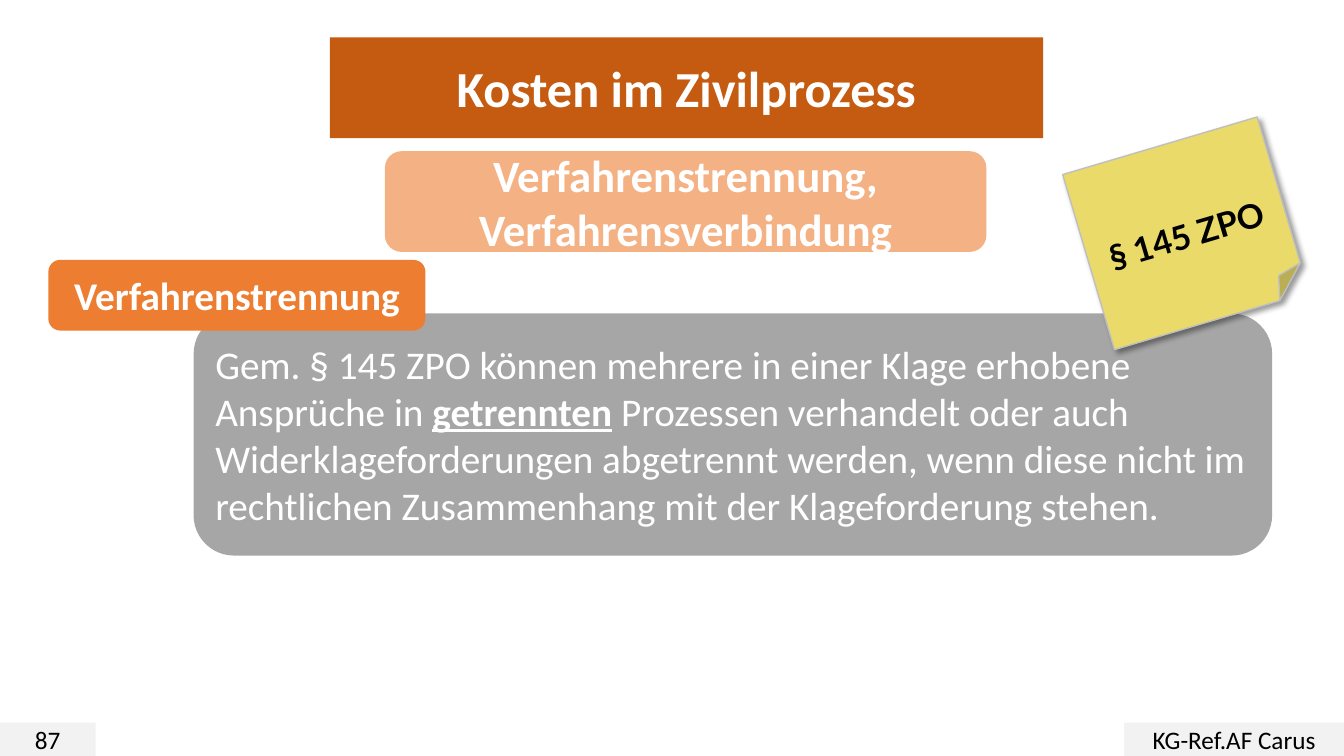
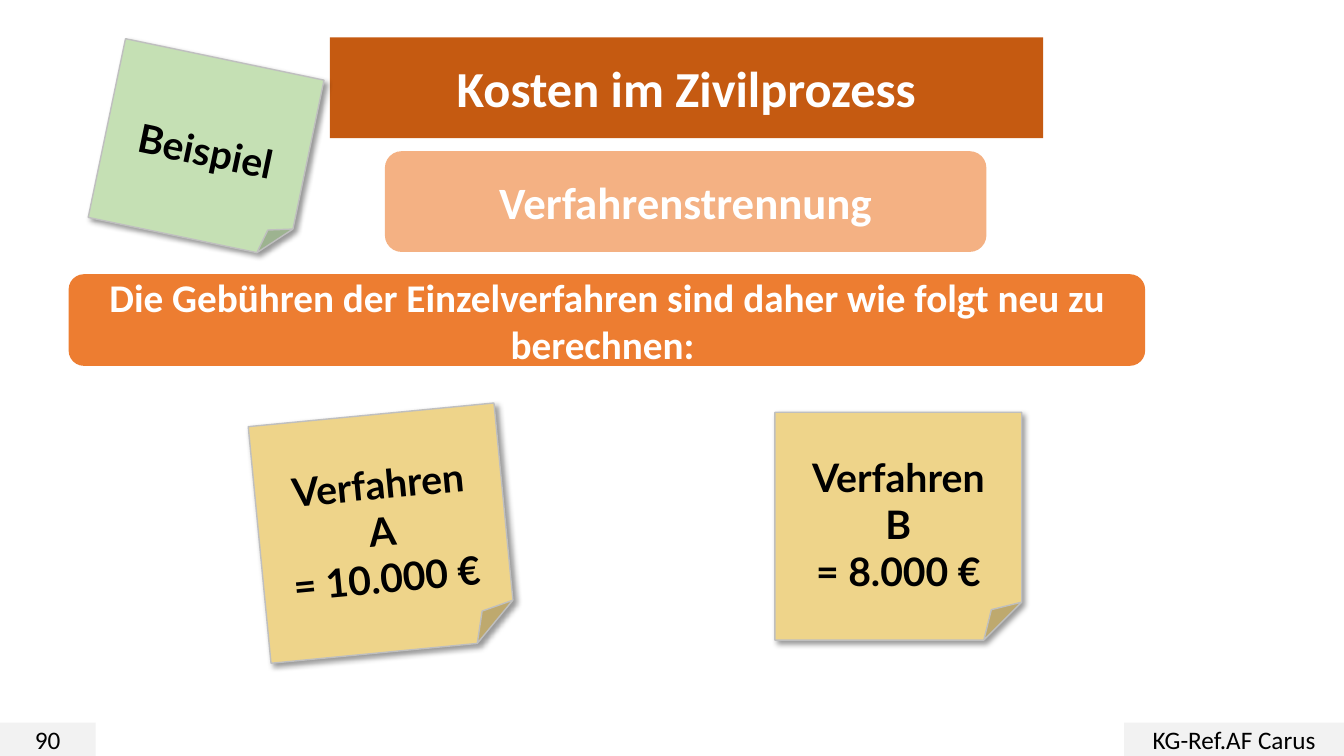
from lxml.etree import SubElement
from pptx import Presentation
from pptx.dml.color import RGBColor
from pptx.enum.shapes import MSO_SHAPE
from pptx.enum.text import MSO_ANCHOR, MSO_AUTO_SIZE, PP_ALIGN
from pptx.oxml import parse_xml
from pptx.oxml.ns import nsdecls, qn
from pptx.util import Cm, Pt

DARK_ORANGE = "C55A11"
ORANGE = "ED7D31"
LIGHT_ORANGE = "F4B183"
GREY = "A6A6A6"
PALE_GREY = "F2F2F2"
NOTE_EDGE = "BFBFBF"
YELLOW = "E9DA69"
GREEN = "C5E0B4"
SAND = "EED48A"
WHITE = "FFFFFF"
BLACK = "000000"

SLIDE_W, SLIDE_H = 33.87, 19.05
FOOTER_H = 0.84
AUTHOR_W = 5.54


def rgb(color):
    return RGBColor.from_string(color)


def place(sp, box):
    sp.left, sp.top, sp.width, sp.height = (Cm(v) for v in box)


def fill(sp, color):
    sp.fill.solid()
    sp.fill.fore_color.rgb = rgb(color)
    sp.line.fill.background()


def write(sp, text, size, color=WHITE, bold=True, font="Calibri", align=PP_ALIGN.CENTER):
    tf = sp.text_frame
    tf.word_wrap = True
    tf.auto_size = MSO_AUTO_SIZE.NONE
    tf.vertical_anchor = MSO_ANCHOR.MIDDLE
    tf.text = text
    for p in tf.paragraphs:
        p.alignment = align
        p.font.name = font
        p.font.size = Pt(size)
        p.font.bold = bold
        p.font.color.rgb = rgb(color)
    return tf


def add_box(s, box, color, kind=MSO_SHAPE.ROUNDED_RECTANGLE):
    sp = s.shapes.add_shape(kind, *(Cm(v) for v in box))
    sp.shadow.inherit = False
    fill(sp, color)
    return sp


def add_label(s, box, color, text, size):
    write(add_box(s, box, color), text, size)


def add_title(s, text):
    sp = s.shapes.title
    place(sp, (8.31, 0.94, 17.98, 2.54))
    sp._element.spPr.append(
        parse_xml(f'<a:prstGeom {nsdecls("a")} prst="roundRect"><a:avLst/></a:prstGeom>'))
    fill(sp, DARK_ORANGE)
    write(sp, text, 36)


def add_footer(s, box, text):
    write(add_box(s, box, PALE_GREY, MSO_SHAPE.RECTANGLE), text, 18, BLACK, bold=False)


def add_shadow(sp):
    effects = sp._element.spPr.find(qn("a:effectLst"))
    shadow = SubElement(effects, qn("a:outerShdw"), blurRad=str(Pt(4)), dist=str(Pt(3)),
                        dir="2700000", algn="tl", rotWithShape="0")
    color = SubElement(shadow, qn("a:srgbClr"), val=BLACK)
    SubElement(color, qn("a:alpha"), val="40000")


def add_note(s, box, color, text, size=28, rotation=0):
    sp = add_box(s, box, color, MSO_SHAPE.FOLDED_CORNER)
    sp.rotation = rotation
    sp.line.color.rgb = rgb(NOTE_EDGE)
    sp.line.width = Pt(1)
    add_shadow(sp)
    tf = write(sp, text, size, BLACK, font="Lato")
    tf.margin_top = Cm(0.98)


def add_body(s, box, before, emphasis, after):
    sp = add_box(s, box, GREY)
    tf = write(sp, before, 28, bold=False, align=PP_ALIGN.LEFT)
    p = tf.paragraphs[0]
    r = p.add_run()
    r.text = emphasis
    r.font.bold = True
    r.font.underline = True
    p.add_run().text = after


def add_slide(prs, subtitle, number):
    s = prs.slides.add_slide(prs.slide_layouts[5])
    add_title(s, "Kosten im Zivilprozess")
    add_label(s, (9.7, 3.81, 15.16, 2.54), LIGHT_ORANGE, subtitle, 32)
    top = SLIDE_H - FOOTER_H
    add_footer(s, (0, top, 2.41, FOOTER_H), str(number))
    add_footer(s, (SLIDE_W - AUTHOR_W, top, AUTHOR_W, FOOTER_H), "KG-Ref.AF Carus")
    return s


def build_definition(prs):
    s = add_slide(prs, "Verfahrenstrennung, Verfahrensverbindung", 87)
    add_body(s, (4.88, 7.9, 27.18, 6.1),
             "Gem. § 145 ZPO können mehrere in einer Klage erhobene Ansprüche in ",
             "getrennten",
             " Prozessen verhandelt oder auch Widerklageforderungen abgetrennt werden, "
             "wenn diese nicht im rechtlichen Zusammenhang mit der Klageforderung stehen.")
    add_label(s, (1.22, 6.55, 9.5, 1.78), ORANGE, "Verfahrenstrennung", 28)
    add_note(s, (27.33, 3.58, 5.11, 4.6), YELLOW, "§ 145 ZPO", 24, 343.5)


def build_example(prs):
    s = add_slide(prs, "Verfahrenstrennung", 90)
    add_label(s, (1.73, 6.91, 27.13, 2.31), ORANGE,
              "Die Gebühren der Einzelverfahren sind daher wie folgt neu zu berechnen: ", 28)
    add_note(s, (2.64, 1.45, 5.11, 4.6), GREEN, "Beispiel", rotation=11.8)
    add_note(s, (6.53, 10.44, 6.22, 5.99), SAND, "Verfahren\nA\n= 10.000 €", rotation=354.5)
    add_note(s, (19.53, 10.39, 6.22, 5.74), SAND, "Verfahren\nB\n= 8.000 €")


def main():
    prs = Presentation()
    prs.slide_width = Cm(SLIDE_W)
    prs.slide_height = Cm(SLIDE_H)
    build_definition(prs)
    build_example(prs)
    prs.save("out.pptx")


if __name__ == "__main__":
    main()
